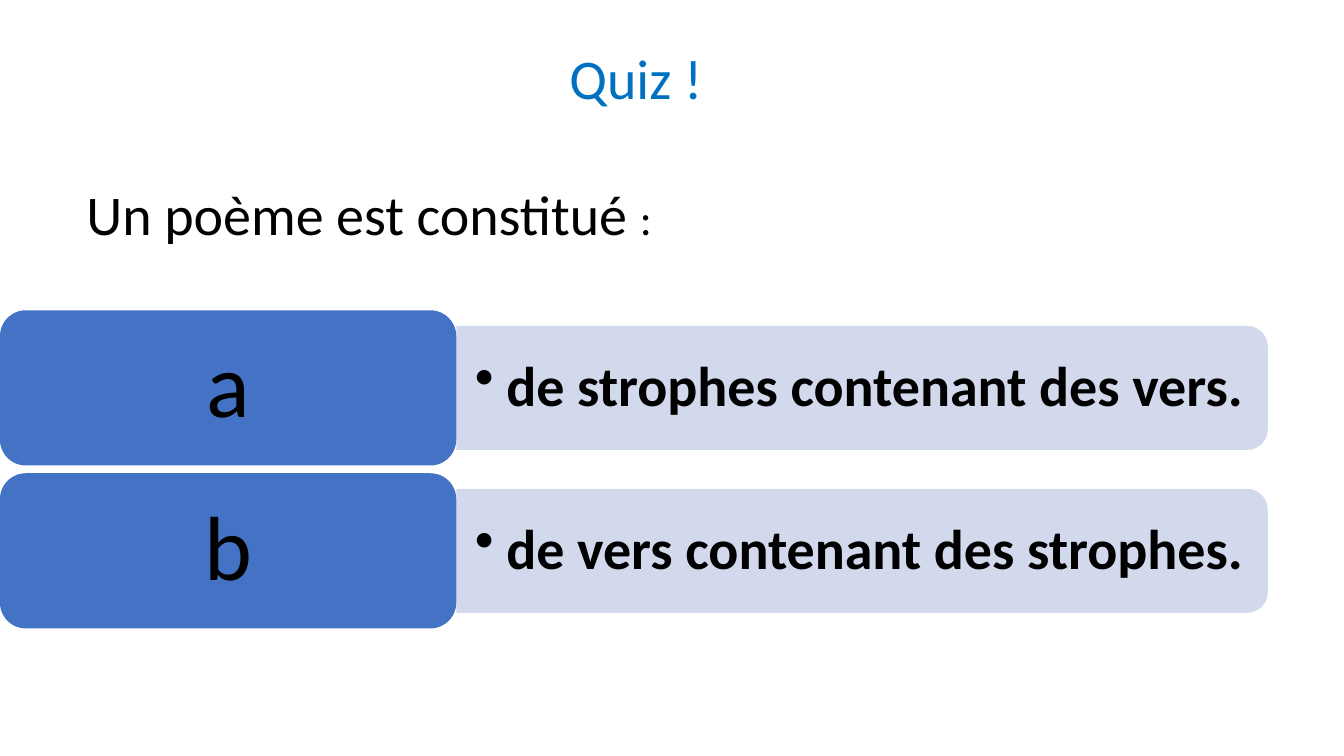
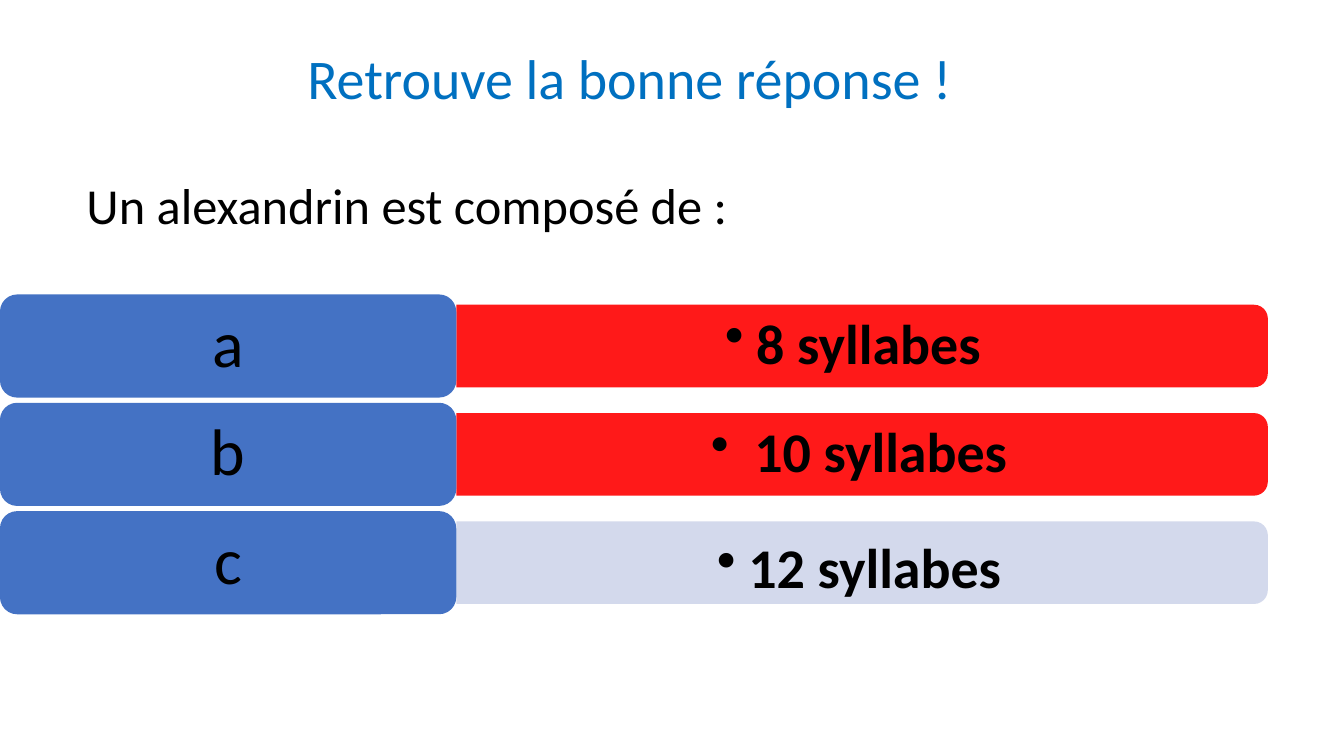
from lxml import etree
from pptx import Presentation
from pptx.dml.color import RGBColor
from pptx.enum.shapes import MSO_SHAPE
from pptx.enum.text import MSO_ANCHOR, PP_ALIGN
from pptx.oxml.ns import qn
from pptx.util import Cm, Pt

ROUND_RECT = MSO_SHAPE.ROUNDED_RECTANGLE
ROUND_TOP = MSO_SHAPE.ROUND_2_SAME_RECTANGLE
LEFT, CENTER = PP_ALIGN.LEFT, PP_ALIGN.CENTER
TOP, MIDDLE = MSO_ANCHOR.TOP, MSO_ANCHOR.MIDDLE

FONT = "Calibri"
BLACK, TITLE_BLUE = "000000", "0070C0"
LETTER_BLUE, PALE, RED = "4472C4", "CFD5EA", "FF0000"

LETTER_WIDTH = 11.5
BAR_LENGTH = 20.45
ANSWER_WIDTH = 20.3
BAR_RATIO, ANSWER_RATIO, PITCH_RATIO = 0.8, 0.72, 1.05
BULLET_INDENT = Cm(0.79)


def write(shape, runs, color=BLACK, bold=False, align=LEFT, anchor=TOP,
          inset=(0.25, 0.13), spacing=1.0, bullet=False):
    """Fill a shape with one paragraph; runs are (text, size) pairs."""
    frame = shape.text_frame
    frame.word_wrap = True
    frame.vertical_anchor = anchor
    frame.margin_left = frame.margin_right = Cm(inset[0])
    frame.margin_top = frame.margin_bottom = Cm(inset[1])
    paragraph = frame.paragraphs[0]
    paragraph.alignment = align
    paragraph.line_spacing = spacing
    if bullet:
        properties = paragraph._p.get_or_add_pPr()
        properties.set("marL", str(BULLET_INDENT))
        properties.set("indent", str(-BULLET_INDENT))
        etree.SubElement(properties, qn("a:buChar")).set("char", "•")
    for text, size in runs:
        run = paragraph.add_run()
        run.text = text
        run.font.name = FONT
        run.font.size = Pt(size)
        run.font.bold = bold
        run.font.color.rgb = RGBColor.from_string(color)


def add_block(slide, kind, left, top, width, height, color, opacity=100):
    block = slide.shapes.add_shape(kind, Cm(left), Cm(top), Cm(width), Cm(height))
    block.shadow.inherit = False
    block.line.fill.background()
    block.fill.solid()
    block.fill.fore_color.rgb = RGBColor.from_string(color)
    if opacity < 100:
        tint = block.fill._xPr.find(qn("a:solidFill"))[0]
        etree.SubElement(tint, qn("a:alpha")).set("val", str(opacity * 1000))
    return block


quizzes = [
    {
        "title": "Quiz !",
        "question": [("Un poème est constitué ", 40), (":", 32)],
        "question_box": (1.93, 4.4, 30.02, 1.96),
        "top": 7.82, "row_height": 3.91, "letter_size": 65, "inset": (0.42, 0.21),
        "answers": [
            ("a", [("de strophes contenant des vers.", 40)], PALE, MIDDLE),
            ("b", [("de vers contenant des strophes.", 40)], PALE, MIDDLE),
        ],
    },
    {
        "title": "Retrouve la bonne réponse ! ",
        "question": [("Un alexandrin est composé de :", 36)],
        "question_box": (1.93, 4.27, 28.83, 1.8),
        "top": 7.42, "row_height": 2.6, "letter_size": 47, "inset": (0.69, 0.36),
        "answers": [
            ("a", [("8 syllabes ", 40)], RED, MIDDLE),
            ("b", [(" ", 38), ("10 syllabes", 40)], RED, MIDDLE),
            ("c", [("12 syllabes", 40)], PALE, TOP),
        ],
    },
]

prs = Presentation()
prs.slide_width, prs.slide_height = Cm(33.87), Cm(19.05)

for quiz in quizzes:
    slide = prs.slides.add_slide(prs.slide_layouts[6])
    row_height = quiz["row_height"]
    bar_height = row_height * BAR_RATIO
    answer_height = row_height * ANSWER_RATIO

    for row, (letter, answer, bar_color, anchor) in enumerate(quiz["answers"]):
        row_top = quiz["top"] + row * row_height * PITCH_RATIO
        middle = row_top + row_height / 2

        # The bar stands upright and is turned so its round corners face right.
        bar = add_block(slide, ROUND_TOP,
                        LETTER_WIDTH + (BAR_LENGTH - bar_height) / 2,
                        middle - BAR_LENGTH / 2,
                        bar_height, BAR_LENGTH, bar_color, opacity=90)
        bar.rotation = 90

        answer_box = slide.shapes.add_textbox(
            Cm(LETTER_WIDTH), Cm(middle - answer_height / 2),
            Cm(ANSWER_WIDTH), Cm(answer_height))
        write(answer_box, answer, bold=True, align=CENTER, anchor=anchor,
              inset=quiz["inset"], spacing=0.9, bullet=True)

        letter_block = add_block(slide, ROUND_RECT, 0, row_top,
                                 LETTER_WIDTH, row_height, LETTER_BLUE)
        write(letter_block, [(letter, quiz["letter_size"])],
              align=CENTER, anchor=MIDDLE, spacing=0.9)

    title = slide.shapes.add_textbox(Cm(4.47), Cm(0.97), Cm(23.11), Cm(1.96))
    write(title, [(quiz["title"], 40)], color=TITLE_BLUE, align=CENTER)

    question = slide.shapes.add_textbox(*map(Cm, quiz["question_box"]))
    write(question, quiz["question"])

prs.save("out.pptx")
